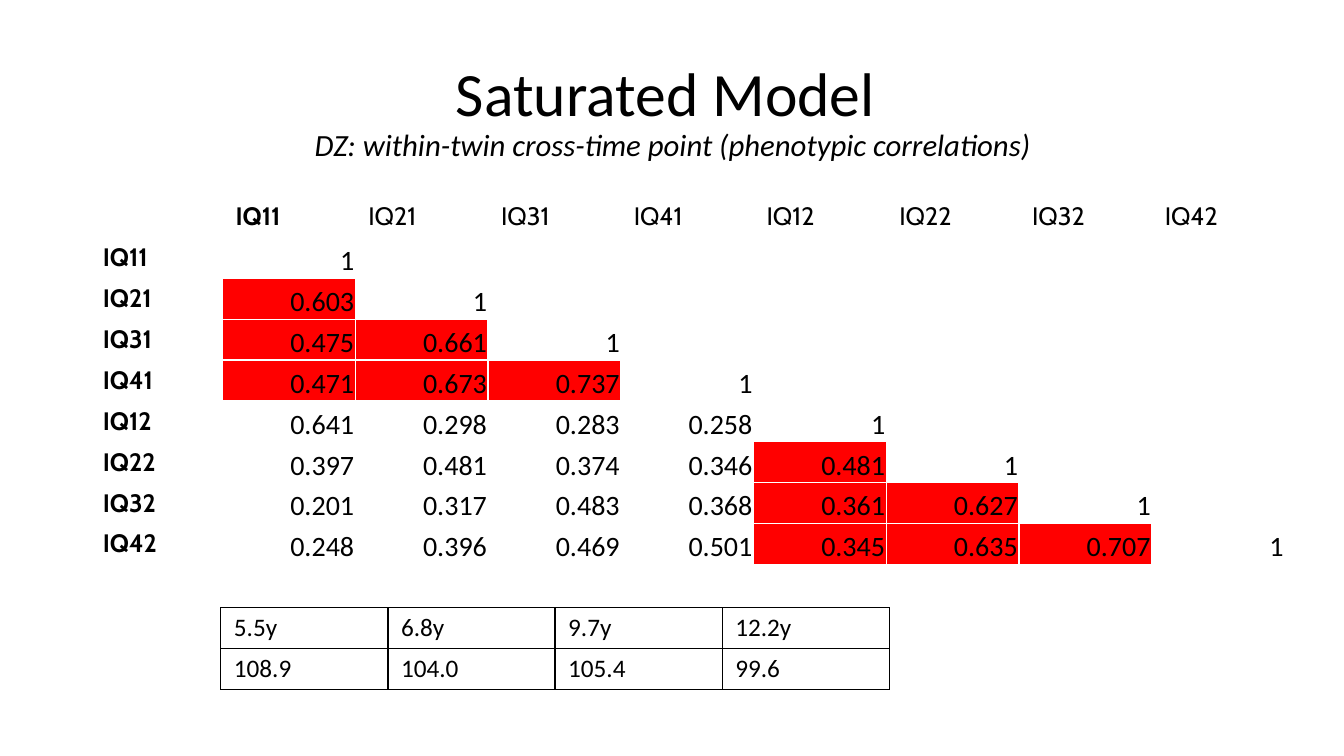
from lxml import etree
from pptx import Presentation
from pptx import util as u
from pptx.dml.color import RGBColor
from pptx.enum import text
from pptx.oxml import ns

TITLE = "Saturated Model "
SUBTITLE = "DZ: within-twin cross-time point (phenotypic correlations)"
VARIABLES = ["IQ11", "IQ21", "IQ31", "IQ41", "IQ12", "IQ22", "IQ32", "IQ42"]
CORRELATIONS = [
    ["1"],
    ["0.603", "1"],
    ["0.475", "0.661", "1"],
    ["0.471", "0.673", "0.737", "1"],
    ["0.641", "0.298", "0.283", "0.258", "1"],
    ["0.397", "0.481", "0.374", "0.346", "0.481", "1"],
    ["0.201", "0.317", "0.483", "0.368", "0.361", "0.627", "1"],
    ["0.248", "0.396", "0.469", "0.501", "0.345", "0.635", "0.707", "1"],
]
MEANS = [
    ["5.5y", "6.8y", "9.7y", "12.2y"],
    ["108.9", "104.0", "105.4", "99.6"],
]
TIME_POINTS = 4
COLORS = {"text": "000000", "within": "FF0000", "white": "FFFFFF", "grid": "000000"}
LABEL_INSETS = (0.13, 0.05, 0.13, 0.05)
VALUE_INSETS = (0.01, 0.01, 0.01, 0)


def write(p, content, size=18, font="Calibri", bold=False, italic=False,
          align=text.PP_ALIGN.LEFT):
    p.alignment = align
    r = p.add_run()
    r.text = content
    r.font.size = u.Pt(size)
    r.font.name = font
    r.font.bold = bold
    r.font.italic = italic
    r.font.color.rgb = RGBColor.from_string(COLORS["text"])


def border(cell, color, bottom=1):
    tc_pr = cell._tc.get_or_add_tcPr()
    for side, width in (("L", 1), ("R", 1), ("T", 1), ("B", bottom)):
        line = etree.SubElement(tc_pr, ns.qn(f"a:ln{side}"), w=str(u.Pt(width)))
        fill = etree.SubElement(line, ns.qn("a:solidFill"))
        etree.SubElement(fill, ns.qn("a:srgbClr"), val=color)


def inset(cell, margins):
    (cell.margin_left, cell.margin_top,
     cell.margin_right, cell.margin_bottom) = [u.Inches(m) for m in margins]


def add_grid(s, rows, cols, left, top, width, height, color, header_line=1):
    frame = s.shapes.add_table(rows, cols, *[u.Inches(v) for v in (left, top, width, height)])
    table = frame.table
    table.first_row = table.horz_banding = False
    for column in table.columns:
        column.width = u.Inches(width / cols)
    for i, row in enumerate(table.rows):
        row.height = u.Inches(height / rows)
        for cell in row.cells:
            border(cell, color, header_line if i == 0 else 1)
            cell.fill.background()
            inset(cell, LABEL_INSETS)
    return table


def add_correlations(s):
    n = len(VARIABLES) + 1
    table = add_grid(s, n, n, 0.89, 1.95, 11.85, 3.65, COLORS["white"], header_line=3)
    for i, name in enumerate(VARIABLES):
        for cell, bold in ((table.cell(0, i + 1), i == 0), (table.cell(i + 1, 0), True)):
            write(cell.text_frame.paragraphs[0], name, font="Cabin", bold=bold)
        for j, value in enumerate(CORRELATIONS[i]):
            cell = table.cell(i + 1, j + 1)
            inset(cell, VALUE_INSETS)
            cell.vertical_anchor = text.MSO_ANCHOR.BOTTOM
            write(cell.text_frame.paragraphs[0], value, size=20, align=text.PP_ALIGN.RIGHT)
            if j < i and i // TIME_POINTS == j // TIME_POINTS:
                cell.fill.solid()
                cell.fill.fore_color.rgb = RGBColor.from_string(COLORS["within"])


def add_means(s):
    table = add_grid(s, len(MEANS), TIME_POINTS, 2.19, 6.03, 6.63, 0.81, COLORS["grid"])
    for i, row in enumerate(MEANS):
        for j, value in enumerate(row):
            write(table.cell(i, j).text_frame.paragraphs[0], value)


def add_title(s):
    title = s.shapes.title
    title.left, title.top, title.width, title.height = [
        u.Inches(v) for v in (0.92, 0.4, 11.5, 1.45)]
    tf = title.text_frame
    tf.word_wrap = True
    tf.vertical_anchor = text.MSO_ANCHOR.MIDDLE
    p = tf.paragraphs[0]
    p.line_spacing = 0.9
    write(p, TITLE, size=44, align=text.PP_ALIGN.CENTER)
    p.add_line_break()
    write(p, SUBTITLE, size=22, italic=True, align=text.PP_ALIGN.CENTER)


def main():
    prs = Presentation()
    prs.slide_width, prs.slide_height = u.Inches(13.33), u.Inches(7.5)
    s = prs.slides.add_slide(prs.slide_layouts[5])
    add_title(s)
    add_correlations(s)
    add_means(s)
    prs.save("out.pptx")


if __name__ == "__main__":
    main()
